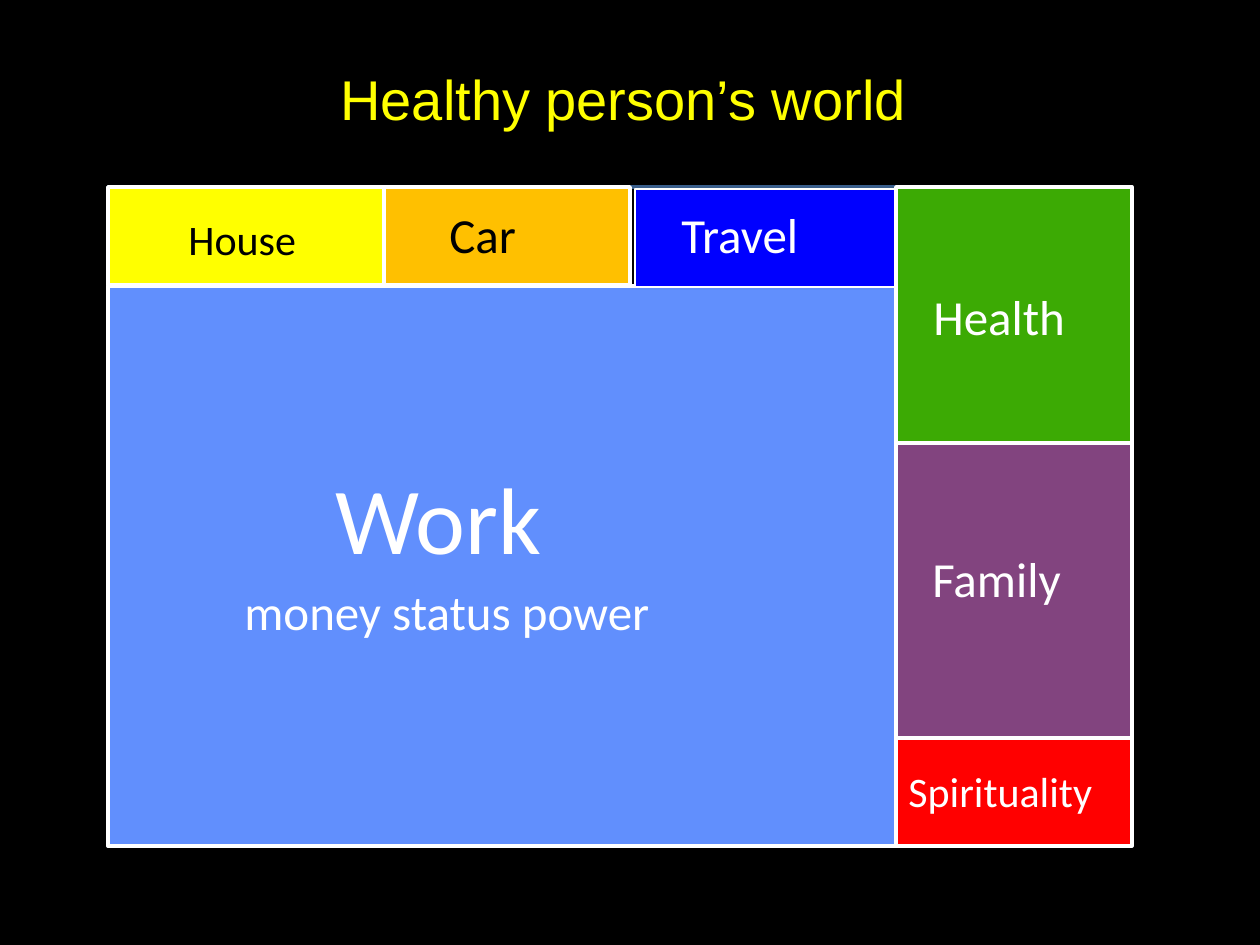
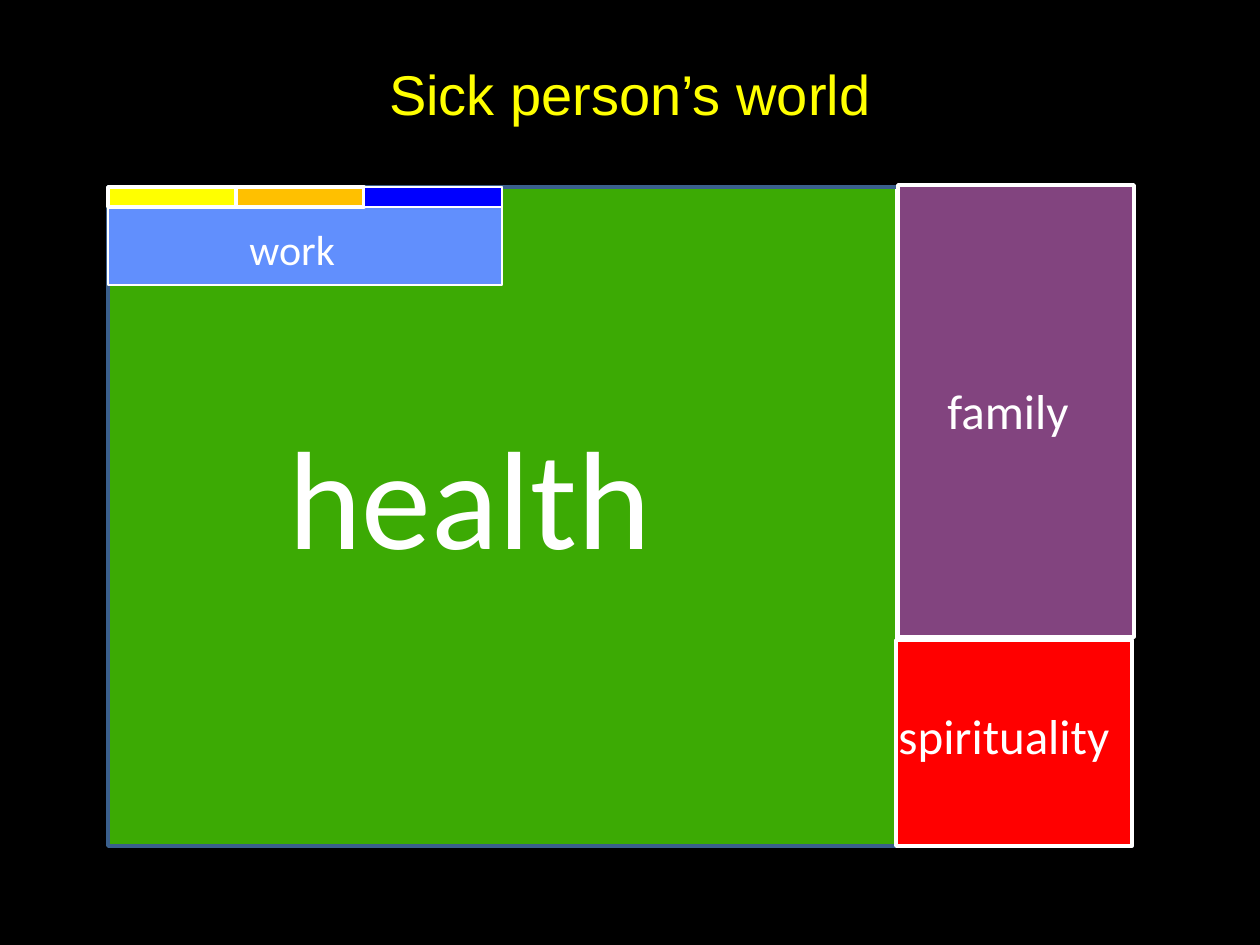
"""Builds two slides comparing a healthy and a sick person's world as tiled blocks."""
from itertools import accumulate

from pptx import Presentation
from pptx.dml.color import RGBColor
from pptx.enum.shapes import MSO_SHAPE
from pptx.enum.text import MSO_ANCHOR, MSO_AUTO_SIZE, PP_ALIGN
from pptx.util import Emu, Pt

RECT = MSO_SHAPE.RECTANGLE
CENTER, LEFT_ALIGN = PP_ALIGN.CENTER, PP_ALIGN.LEFT
MIDDLE, TOP_ANCHOR = MSO_ANCHOR.MIDDLE, MSO_ANCHOR.TOP
FIT, NO_FIT = MSO_AUTO_SIZE.SHAPE_TO_FIT_TEXT, MSO_AUTO_SIZE.NONE

BLACK, WHITE, STEEL = "000000", "FFFFFF", "3A5F8C"
YELLOW, ORANGE, BLUE = "FFFF00", "FFC000", "0000FF"
SKY, GREEN, PURPLE, RED = "618FFD", "3CAA04", "82447F", "FF0000"

PX_PER_INCH = 126
LEFT, TOP, WIDTH, HEIGHT = 108, 187, 1024, 659
SIDE_W = 236
MAIN_W = WIDTH - SIDE_W
SIDE_X = LEFT + MAIN_W
ROW_H = 98
THIN_ROW_H = 20


def row(widths, h):
    """Return boxes laid side by side from the frame's top left corner."""
    return [(LEFT + end - w, TOP, w, h) for w, end in zip(widths, accumulate(widths))]


def column(heights):
    """Return boxes stacked down the frame's right side."""
    return [(SIDE_X, TOP + end - h, SIDE_W, h) for h, end in zip(heights, accumulate(heights))]


house, car = row([276, 246], ROW_H)
health, family, spirituality = column([256, 295, 108])
small_house, small_car, small_travel = row([128, 128, 138], THIN_ROW_H)
FRAME = (LEFT, TOP, WIDTH, HEIGHT)

# Each block: box, fill, line colour, line width. Each label: text, x, y, width, size, colour.
SLIDES = [
    {
        "title": ("Healthy person’s world", (88, 39, 1071, 118)),
        "blocks": [
            (FRAME, None, STEEL, 2),
            ((LEFT, TOP + ROW_H + 1, MAIN_W, HEIGHT - ROW_H - 1), SKY, WHITE, 2),
            (house, YELLOW, WHITE, 2),
            (car, ORANGE, WHITE, 2),
            ((635, 189, 266, ROW_H), BLUE, WHITE, 1),
            (health, GREEN, WHITE, 2),
            (family, PURPLE, WHITE, 2),
            (spirituality, RED, WHITE, 2),
        ],
        "labels": [
            ("Work", 323, 454, 403, 54, WHITE),
            ("House", 176, 207, 207, 24, BLACK),
            ("Car", 437, 198, 140, 28, BLACK),
            ("Travel", 669, 198, 168, 28, WHITE),
            ("money status power", 232, 575, 473, 28, WHITE),
            ("Health", 921, 280, 175, 28, WHITE),
            ("Family", 920, 542, 186, 28, WHITE),
            ("Spirituality", 896, 759, 244, 24, WHITE),
        ],
    },
    {
        "title": ("Sick person’s world", (63, 38, 1134, 110)),
        "blocks": [
            ((LEFT, TOP, MAIN_W, HEIGHT), GREEN, WHITE, 1),
            (FRAME, None, STEEL, 2),
            ((LEFT, TOP, 394, ROW_H), SKY, WHITE, 1),
            (small_house, YELLOW, WHITE, 2),
            (small_car, ORANGE, WHITE, 2),
            (small_travel, BLUE, WHITE, 1),
            ((898, 185, SIDE_W, 452), PURPLE, WHITE, 2),
            ((SIDE_X, 640, SIDE_W, 206), RED, WHITE, 2),
        ],
        "labels": [
            ("work", 237, 217, 118, 24, WHITE),
            ("health", 276, 403, 483, 80, WHITE),
            ("family", 935, 374, 168, 28, WHITE),
            ("spirituality", 886, 699, 246, 28, WHITE),
        ],
    },
]


def px(n):
    """Convert pixels to EMU."""
    return Emu(round(n * 914400 / PX_PER_INCH))


def rgb(code):
    """Convert a hex string to a colour."""
    return RGBColor.from_string(code)


def set_text(tf, text, size, color, font="Calibri", align=LEFT_ALIGN, anchor=TOP_ANCHOR, fit=FIT):
    """Write one formatted line into a text frame."""
    tf.word_wrap = True
    tf.auto_size = fit
    tf.vertical_anchor = anchor
    p = tf.paragraphs[0]
    p.alignment = align
    r = p.add_run()
    r.text = text
    r.font.size, r.font.name = Pt(size), font
    r.font.color.rgb = rgb(color)


def add_title(s, text, box):
    """Place and format the title placeholder."""
    sp = s.shapes.title
    sp.left, sp.top, sp.width, sp.height = map(px, box)
    set_text(sp.text_frame, text, 32, YELLOW, font="Arial", align=CENTER, anchor=MIDDLE, fit=NO_FIT)


def add_block(s, box, fill, line, weight):
    """Draw one outlined rectangle, filled when a fill is given."""
    sp = s.shapes.add_shape(RECT, *map(px, box))
    sp.shadow.inherit = False
    if fill:
        sp.fill.solid()
        sp.fill.fore_color.rgb = rgb(fill)
    else:
        sp.fill.background()
    sp.line.color.rgb = rgb(line)
    sp.line.width = Pt(weight)


def add_label(s, text, x, y, w, size, color):
    """Add a one-line text box whose height follows its font size."""
    h = round(size * 1.22 * PX_PER_INCH / 72 + PX_PER_INCH / 10)
    sp = s.shapes.add_textbox(*map(px, (x, y, w, h)))
    set_text(sp.text_frame, text, size, color)


def main():
    """Build and save the deck."""
    prs = Presentation()
    prs.slide_width, prs.slide_height = px(1260), px(945)
    bg = prs.slide_master.background.fill
    bg.solid()
    bg.fore_color.rgb = rgb(BLACK)
    for content in SLIDES:
        s = prs.slides.add_slide(prs.slide_layouts[5])
        add_title(s, *content["title"])
        for block in content["blocks"]:
            add_block(s, *block)
        for label in content["labels"]:
            add_label(s, *label)
    prs.save("out.pptx")


if __name__ == "__main__":
    main()
